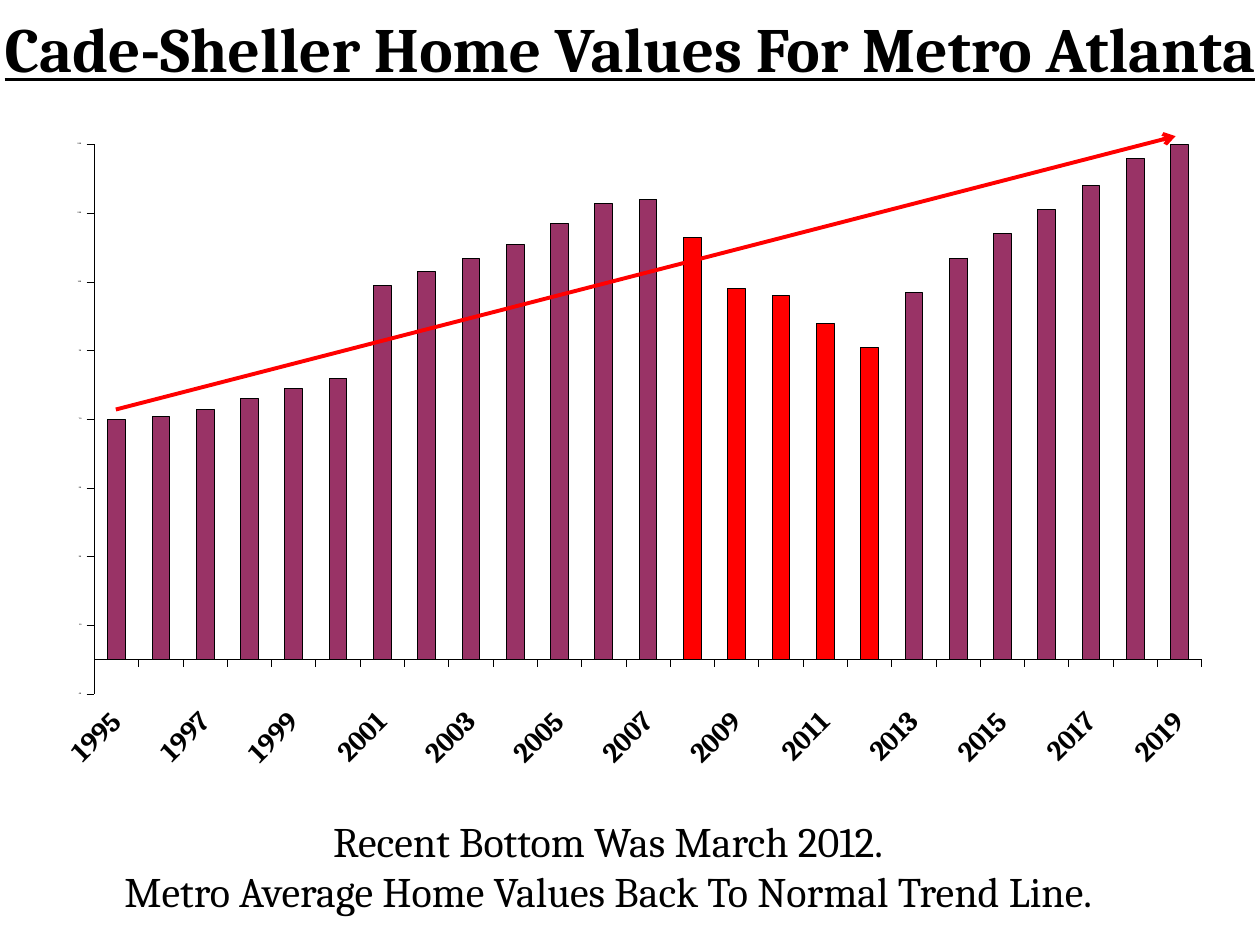
from pptx import Presentation
from pptx.chart.data import CategoryChartData as Data
from pptx.dml.color import RGBColor as RGB
from pptx.enum.chart import XL_CHART_TYPE as Kind, XL_TICK_LABEL_POSITION as Label, XL_TICK_MARK as Tick
from pptx.enum.shapes import MSO_CONNECTOR as Link
from pptx.enum.text import MSO_ANCHOR as Anchor, MSO_AUTO_SIZE as Auto, PP_ALIGN as Align
from pptx.oxml import parse_xml
from pptx.oxml.ns import nsdecls, qn
from pptx.util import Pt

TITLE = "Cade-Sheller Home Values For Metro Atlanta"
NOTES = ["Recent Bottom Was March 2012.", "Metro Average Home Values Back To Normal Trend Line."]
START = 1995
VALUES = [70, 71, 73, 76, 79, 82, 109, 113, 117, 121, 127, 133, 134,
          123, 108, 106, 98, 91, 107, 117, 124, 131, 138, 146, 151]
SLUMP = range(2008, 2013)
PLOT = {"x": 0.05, "y": 0.1, "w": 0.94, "h": 0.74}
BLACK, RED, PLUM = "000000", "FF0000", "993366"


def color(code):
    return RGB.from_string(code)


def style(font, size, **extra):
    font.color.rgb = color(BLACK)
    for key, val in {"name": "Cambria", "size": Pt(size), **extra}.items():
        setattr(font, key, val)


def paint(part, code):
    part.fill.solid()
    part.fill.fore_color.rgb = color(code)
    part.line.color.rgb = color(BLACK)
    part.line.width = Pt(0.06)


def place(shape, *box):
    for key, val in zip(("left", "top", "width", "height"), box):
        setattr(shape, key, Pt(val))


def write(shape, lines, anchor, sides, size, **extra):
    frame = shape.text_frame
    frame.auto_size, frame.word_wrap = Auto.NONE, True
    frame.vertical_anchor = anchor
    frame.margin_left, frame.margin_right = map(Pt, sides)
    para = frame.paragraphs[0]
    props = para._p.get_or_add_pPr()
    props.set("marL", "0")
    props.set("indent", "0")
    props.append(parse_xml(f"<a:buNone {nsdecls('a')}/>"))
    para.alignment, para.space_before = Align.CENTER, Pt(0)
    for i, line in enumerate(lines):
        if i:
            para.add_line_break()
        run = para.add_run()
        run.text = line
        style(run.font, size, **extra)


def draw_chart(slide):
    data = Data()
    data.categories = [str(START + i) for i in range(len(VALUES))]
    data.add_series("Series 1", VALUES)
    frame = slide.shapes.add_chart(Kind.COLUMN_CLUSTERED, Pt(20.1), Pt(40), Pt(673.2), Pt(424.5), data)
    chart = frame.chart
    chart.has_legend = chart.has_title = False
    style(chart.font, 1.2, bold=True)
    plot = chart.plots[0]
    plot.gap_width, plot.vary_by_categories = 150, False
    bars = plot.series[0]
    paint(bars.format, PLUM)
    for year in SLUMP:
        paint(bars.points[year - START].format, RED)

    years, scale = chart.category_axis, chart.value_axis
    for axis, size in ((years, 16), (scale, 1.2)):
        axis.has_major_gridlines = False
        axis.major_tick_mark, axis.minor_tick_mark = Tick.OUTSIDE, Tick.NONE
        style(axis.tick_labels.font, size, bold=True)
        axis.format.line.color.rgb = color(BLACK)
        axis.format.line.width = Pt(0.02)
    years.tick_label_position = Label.LOW
    scale.minimum_scale, scale.maximum_scale, scale.major_unit = -10, 150, 20

    node = years._element
    node.find(qn("c:txPr")).find(qn("a:bodyPr")).set("rot", "-2700000")
    skip = parse_xml(f'<c:tickLblSkip {nsdecls("c")} val="2"/>')
    node.find(qn("c:noMultiLvlLbl")).addprevious(skip)

    area = chart._chartSpace.chart.plotArea
    for old in area.findall(qn("c:layout")):
        area.remove(old)
    modes = "".join(f'<c:{k}Mode val="edge"/>' for k in "xy")
    sizes = "".join(f'<c:{k} val="{v}"/>' for k, v in PLOT.items())
    area.insert(0, parse_xml(
        f'<c:layout {nsdecls("c")}><c:manualLayout><c:layoutTarget val="inner"/>'
        f"{modes}{sizes}</c:manualLayout></c:layout>"))


def draw_trend(slide):
    trend = slide.shapes.add_connector(Link.STRAIGHT, Pt(66.2), Pt(234), Pt(671.8), Pt(77.8))
    trend.line.color.rgb = color(RED)
    trend.line.width = Pt(2.25)
    trend.line._get_or_add_ln().append(parse_xml(f'<a:tailEnd {nsdecls("a")} type="arrow"/>'))
    trend._element.spPr.append(parse_xml(f"<a:effectLst {nsdecls('a')}/>"))


def main():
    deck = Presentation()
    deck.slide_width, deck.slide_height = Pt(720), Pt(540)
    slide = deck.slides.add_slide(deck.slide_layouts[1])
    title, body = slide.placeholders
    place(title, 0, 12.2, 720, 30.2)
    write(title, [TITLE], Anchor.MIDDLE, (0, 0), 36, bold=True, underline=True)
    place(body, 18, 462.2, 671.8, 65.5)
    write(body, NOTES, Anchor.TOP, (7.2, 20), 24)
    draw_chart(slide)
    draw_trend(slide)
    deck.save("out.pptx")


if __name__ == "__main__":
    main()
